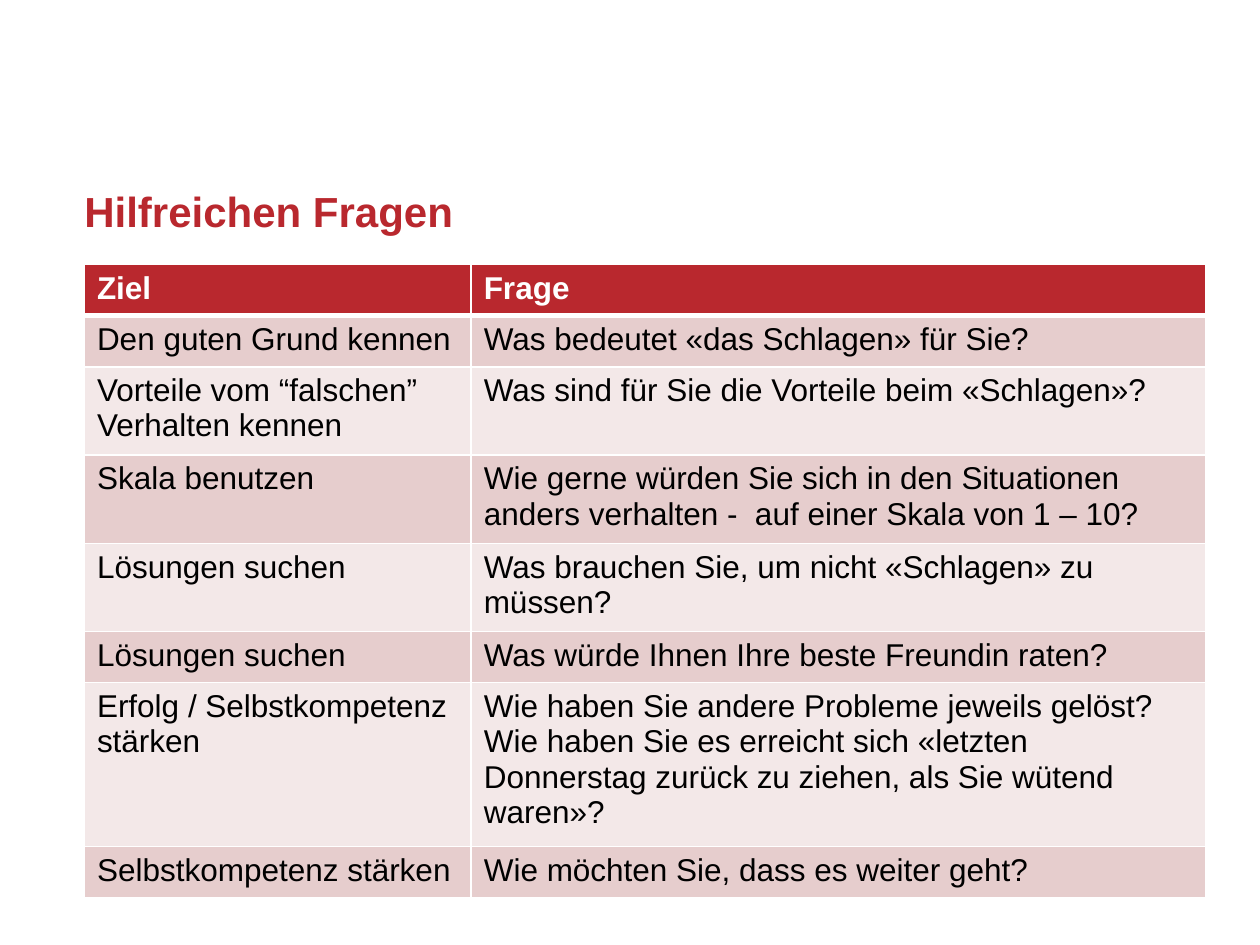
from lxml import etree
from pptx import Presentation
from pptx.dml.color import RGBColor
from pptx.enum.text import MSO_ANCHOR
from pptx.oxml.ns import qn
from pptx.util import Pt

MIDDLE = MSO_ANCHOR.MIDDLE
RED = RGBColor(0xB9, 0x28, 0x2E)
WHITE = RGBColor(0xFF, 0xFF, 0xFF)
BLACK = RGBColor(0x00, 0x00, 0x00)
ROSE = RGBColor(0xE6, 0xCD, 0xCD)
PALE_ROSE = RGBColor(0xF3, 0xE8, 0xE8)
FONT = "Arial"

LEFT, WIDTH = 48.24, 640.8
GOAL_WIDTH = 221.04
ROW_HEIGHT = 29.2
THIN, THICK = 1, 3

# Each row: goal, then the paragraphs of its question
ROWS = [
    ("Ziel", ["Frage"]),
    ("Den guten Grund kennen", ["Was bedeutet «das Schlagen» für Sie?"]),
    ("Vorteile vom “falschen” Verhalten kennen",
     ["Was sind für Sie die Vorteile beim «Schlagen»?"]),
    ("Skala benutzen",
     ["Wie gerne würden Sie sich in den Situationen anders verhalten -  "
      "auf einer Skala von 1 – 10?"]),
    ("Lösungen suchen", ["Was brauchen Sie, um nicht «Schlagen» zu müssen?"]),
    ("Lösungen suchen", ["Was würde Ihnen Ihre beste Freundin raten?"]),
    ("Erfolg / Selbstkompetenz stärken",
     ["Wie haben Sie andere Probleme jeweils gelöst?",
      "Wie haben Sie es erreicht sich «letzten Donnerstag zurück zu ziehen, "
      "als Sie wütend waren»?"]),
    ("Selbstkompetenz stärken", ["Wie möchten Sie, dass es weiter geht?"]),
]


def write_paragraphs(frame, texts, size, color, bold):
    for index, text in enumerate(texts):
        para = frame.paragraphs[0] if index == 0 else frame.add_paragraph()
        span = para.add_run()
        span.text = text
        span.font.name = FONT
        span.font.size = Pt(size)
        span.font.bold = bold
        span.font.color.rgb = color


def set_borders(cell, top, bottom):
    """Draw white cell borders; must run before the cell's fill is set."""
    properties = cell._tc.get_or_add_tcPr()
    for side, width in (("L", THIN), ("R", THIN), ("T", top), ("B", bottom)):
        line = etree.SubElement(properties, qn(f"a:ln{side}"), w=str(Pt(width)))
        fill = etree.SubElement(line, qn("a:solidFill"))
        etree.SubElement(fill, qn("a:srgbClr"), val=str(WHITE))


def add_title(page, left, top, width, height):
    box = page.shapes.add_textbox(Pt(left), Pt(top), Pt(width), Pt(height))
    frame = box.text_frame
    frame.word_wrap = True
    frame.vertical_anchor = MIDDLE
    frame.margin_left = frame.margin_right = 0
    frame.margin_top = frame.margin_bottom = 0
    write_paragraphs(frame, ["Hilfreichen Fragen"], 24, RED, True)


def add_question_table(page, left, top, width):
    table = page.shapes.add_table(
        len(ROWS), 2, Pt(left), Pt(top), Pt(width), Pt(ROW_HEIGHT * len(ROWS))
    ).table
    table.columns[0].width = Pt(GOAL_WIDTH)
    table.columns[1].width = Pt(width - GOAL_WIDTH)
    for index, (goal, questions) in enumerate(ROWS):
        table.rows[index].height = Pt(ROW_HEIGHT)
        header = index == 0
        band = RED if header else ROSE if index % 2 else PALE_ROSE
        for column, texts in enumerate(([goal], questions)):
            cell = table.cell(index, column)
            set_borders(cell, top=THICK if index == 1 else THIN,
                        bottom=THICK if header else THIN)
            cell.fill.solid()
            cell.fill.fore_color.rgb = band
            write_paragraphs(cell.text_frame, texts, 18,
                             WHITE if header else BLACK, header)


def main():
    deck = Presentation()
    deck.slide_width, deck.slide_height = Pt(720), Pt(540)
    page = deck.slides.add_slide(deck.slide_layouts[6])
    add_title(page, LEFT, 105.84, WIDTH, 28.8)
    add_question_table(page, LEFT, 151.2, WIDTH)
    deck.save("out.pptx")


if __name__ == "__main__":
    main()
